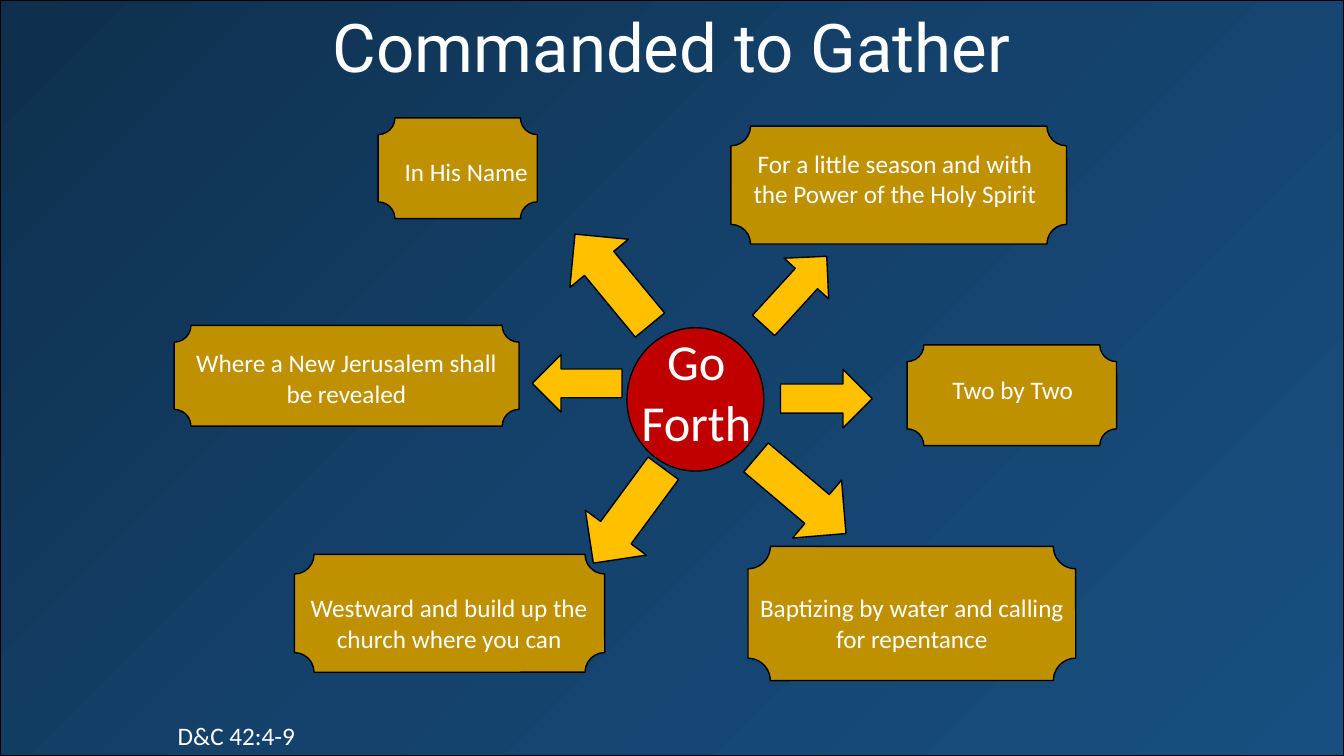
from copy import deepcopy
from dataclasses import dataclass

from pptx import Presentation
from pptx import util as u
from pptx.dml.color import RGBColor
from pptx.enum import shapes, text
from pptx.oxml import ns


@dataclass(frozen=True)
class Theme:
    night: tuple = ("0E2F4C", "14426C", "184F80")
    white: str = "FFFFFF"
    outline: str = "000000"
    hub: str = "C00000"
    plaque: str = "BF9000"
    arrow: str = "FFC000"
    title_font: str = "Roboto"
    body_font: str = "Calibri"
    title_size: int = 48
    hub_size: int = 36
    body_size: int = 18


THEME = Theme()
KIND = shapes.MSO_SHAPE
CENTER = text.PP_ALIGN.CENTER
CAPTION_WIDTH = 8.26
CAPTION_HEIGHTS = {1: 1.02, 2: 1.8}

PLAQUES = [
    ("In His Name", (9.53, 2.97, 4.01, 2.54), (7.62, 3.81), 1),
    ("For a little season and with the Power of the Holy Spirit",
     (18.42, 3.18, 8.46, 2.97), (18.42, 3.61), 2),
    ("Two by Two", (22.86, 8.69, 5.28, 2.54), (21.39, 9.32), 1),
    ("Baptizing by water and calling for repentance",
     (18.85, 13.77, 8.26, 3.38), (18.85, 14.81), 2),
    ("Westward and build up the church where you can",
     (7.42, 13.97, 7.82, 2.97), (7.19, 14.81), 2),
    ("Where a New Jerusalem shall be revealed",
     (4.39, 8.2, 8.69, 2.54), (4.6, 8.64), 2),
]

ARROWS = [
    ((14.48, 5.56, 1.91, 2.97), 320.5),
    ((19.28, 6.15, 1.52, 2.36), 42.4),
    ((13.82, 8.53, 1.45, 2.26), 270),
    ((14.88, 11.51, 1.91, 2.97), 216.4),
    ((20.09, 8.89, 1.47, 2.31), 90),
    ((19.23, 11, 1.91, 2.97), 130.2),
]


def rgb(color):
    return RGBColor.from_string(color)


def cm(box):
    return [u.Cm(length) for length in box]


def add_outlined(parent, kind, box, color=None, rotation=0):
    figure = parent.add_shape(kind, *cm(box))
    figure.shadow.inherit = False
    figure.rotation = rotation
    figure.line.color.rgb = rgb(THEME.outline)
    figure.line.width = u.Pt(1)
    if color:
        figure.fill.solid()
        figure.fill.fore_color.rgb = rgb(color)
    return figure


def add_label(parent, box, lines, size, font=THEME.body_font, align=CENTER):
    label = parent.add_textbox(*cm(box))
    frame = label.text_frame
    frame.word_wrap = True
    for index, line in enumerate(lines):
        paragraph = frame.add_paragraph() if index else frame.paragraphs[0]
        paragraph.alignment = align
        run = paragraph.add_run()
        run.text = line
        run.font.name = font
        run.font.size = u.Pt(size)
        run.font.color.rgb = rgb(THEME.white)


def add_night_sky(slide, width, height):
    sky = add_outlined(slide.shapes, KIND.RECTANGLE, (0, 0, width, height))
    sky.fill.gradient()
    sky.fill.gradient_angle = 315
    stop_list = next(sky._element.iter(ns.qn("a:gsLst")))
    stop_list.append(deepcopy(stop_list[0]))
    for index, (stop, color) in enumerate(zip(sky.fill.gradient_stops, THEME.night)):
        stop.color.rgb = rgb(color)
        stop.position = index / 2


def add_hub(slide):
    hub = slide.shapes.add_group_shape().shapes
    add_outlined(hub, KIND.OVAL, (15.8, 8.26, 3.45, 3.61), THEME.hub)
    add_label(hub, (14.63, 8.2, 5.84, 3.33), ["Go", "Forth"], THEME.hub_size)


def add_plaque(slide, caption, box, caption_corner, line_count):
    plaque = slide.shapes.add_group_shape().shapes
    add_outlined(plaque, KIND.PLAQUE, box, THEME.plaque)
    caption_box = (*caption_corner, CAPTION_WIDTH, CAPTION_HEIGHTS[line_count])
    add_label(plaque, caption_box, [caption], THEME.body_size)


def main():
    width, height = 33.87, 19.05
    deck = Presentation()
    deck.slide_width, deck.slide_height = cm((width, height))
    slide = deck.slides.add_slide(deck.slide_layouts[6])

    add_night_sky(slide, width, height)
    add_label(slide.shapes, (4.23, 0, 25.4, 2.31), ["Commanded to Gather"],
              THEME.title_size, THEME.title_font)
    add_hub(slide)
    for plaque in PLAQUES:
        add_plaque(slide, *plaque)
    add_label(slide.shapes, (4.23, 18.03, CAPTION_WIDTH, CAPTION_HEIGHTS[1]),
              ["D&C 42:4-9"], THEME.body_size, align=text.PP_ALIGN.LEFT)
    for box, rotation in ARROWS:
        add_outlined(slide.shapes, KIND.UP_ARROW, box, THEME.arrow, rotation)

    deck.save("out.pptx")


if __name__ == "__main__":
    main()
